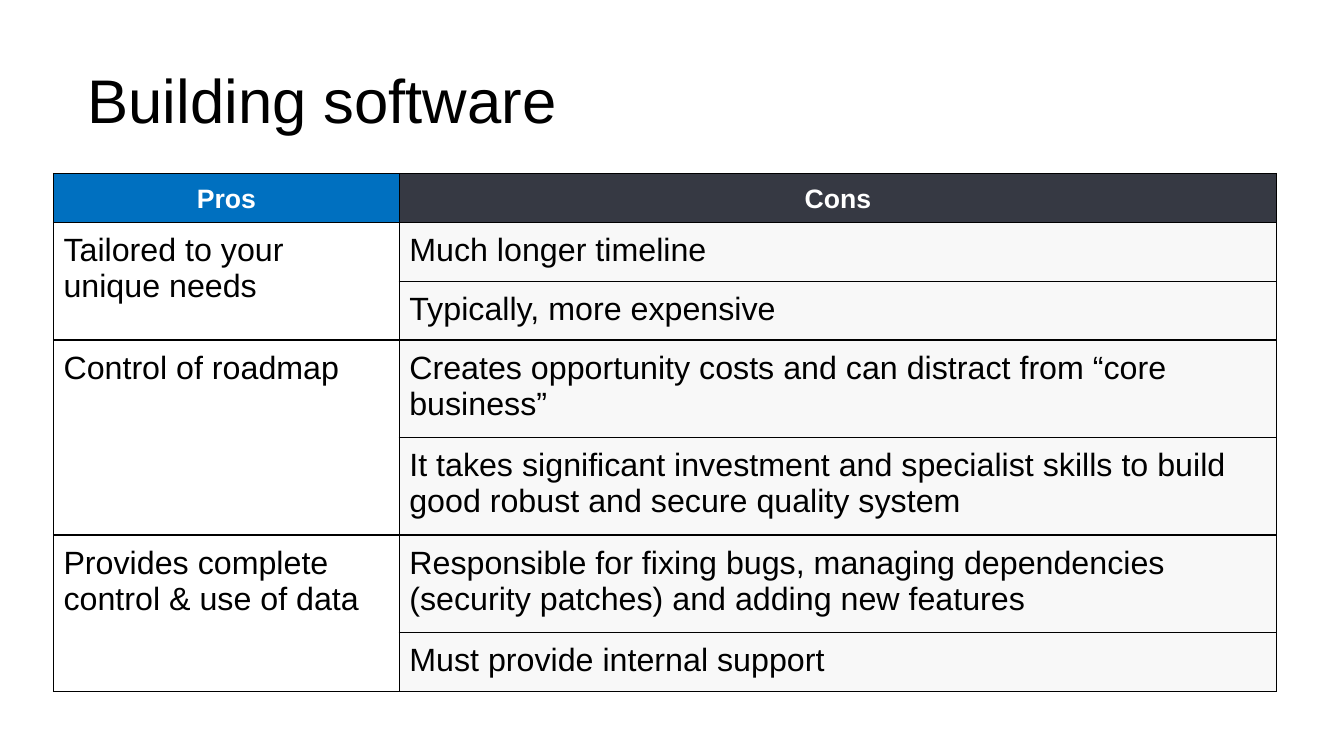
from lxml import etree
from pptx import Presentation
from pptx.dml.color import RGBColor
from pptx.enum.text import MSO_ANCHOR, PP_ALIGN
from pptx.oxml.ns import qn
from pptx.util import Inches, Pt

MIDDLE, TOP = MSO_ANCHOR.MIDDLE, MSO_ANCHOR.TOP
LEFT, CENTER = PP_ALIGN.LEFT, PP_ALIGN.CENTER
WIDE, HIGH = 13.33, 7.5
BLACK, WHITE, BLUE, SLATE, PALE = "000000", "FFFFFF", "0070C0", "363943", "F8F8F8"

PAIRS = [
    ("Tailored to your unique needs",
     "Much longer timeline",
     "Typically, more expensive"),
    ("Control of roadmap",
     "Creates opportunity costs and can distract from “core business”",
     "It takes significant investment and specialist skills to build "
     "good robust and secure quality system"),
    ("Provides complete control & use of data",
     "Responsible for fixing bugs, managing dependencies "
     "(security patches) and adding new features",
     "Must provide internal support"),
]
HEAD, ONE, TWO = 0.48, 0.57, 0.95
ROWS = [HEAD, ONE, ONE, TWO, TWO, TWO, ONE]
COLS = [3.43, 8.7]


def tint(code):
    return RGBColor.from_string(code)


class Board:
    """Holds the style and the current slide."""
    font = "Arial"

    def __init__(self, deck):
        self.slide = deck.slides.add_slide(deck.slide_layouts[6])

    def text(self, para, words, size, color, bold=False):
        run = para.add_run()
        run.text = words
        run.font.name, run.font.size, run.font.bold = self.font, Pt(size), bold
        run.font.color.rgb = tint(color)

    def title(self, words, left, top, width, height):
        box = self.slide.shapes.add_textbox(*map(Inches, (left, top, width, height)))
        frame = box.text_frame
        frame.word_wrap = True
        frame.vertical_anchor = MIDDLE
        para = frame.paragraphs[0]
        para.line_spacing = 0.9
        self.text(para, words, 44, BLACK)

    def table(self, left, top, cols, rows):
        frame = self.slide.shapes.add_table(
            len(rows), len(cols), Inches(left), Inches(top),
            Inches(sum(cols)), Inches(sum(rows)))
        grid = frame.table
        for col, width in zip(grid.columns, cols):
            col.width = Inches(width)
        for row, height in zip(grid.rows, rows):
            row.height = Inches(height)
        return grid

    def cell(self, cell, words, fill, head=False):
        cell.margin_left = cell.margin_right = cell.margin_top = Inches(0.1)
        cell.margin_bottom = Inches(0.07 if head else 0.1)
        cell.vertical_anchor = MIDDLE if head else TOP
        self.edge(cell)
        cell.fill.solid()
        cell.fill.fore_color.rgb = tint(fill)
        para = cell.text_frame.paragraphs[0]
        para.alignment = CENTER if head else LEFT
        if words:
            self.text(para, words, 19 if head else 23, WHITE if head else BLACK, head)

    def edge(self, cell):
        """Draw a thin black line on all four sides."""
        props = cell._tc.get_or_add_tcPr()
        for side in ("a:lnL", "a:lnR", "a:lnT", "a:lnB"):
            line = etree.SubElement(props, qn(side), w=str(Pt(1)))
            solid = etree.SubElement(line, qn("a:solidFill"))
            etree.SubElement(solid, qn("a:srgbClr"), val=BLACK)


def main():
    deck = Presentation()
    deck.slide_width, deck.slide_height = Inches(WIDE), Inches(HIGH)
    board = Board(deck)
    board.title("Building software", 0.77, 0.17, 11.03, 1.71)

    grid = board.table(0.53, 1.72, COLS, ROWS)
    board.cell(grid.cell(0, 0), "Pros", BLUE, head=True)
    board.cell(grid.cell(0, 1), "Cons", SLATE, head=True)
    for i, (pro, *cons) in enumerate(PAIRS):
        first = 1 + 2 * i
        for j, con in enumerate(cons):
            board.cell(grid.cell(first + j, 0), "" if j else pro, WHITE)
            board.cell(grid.cell(first + j, 1), con, PALE)
        grid.cell(first, 0).merge(grid.cell(first + 1, 0))
    deck.save("out.pptx")


if __name__ == "__main__":
    main()
